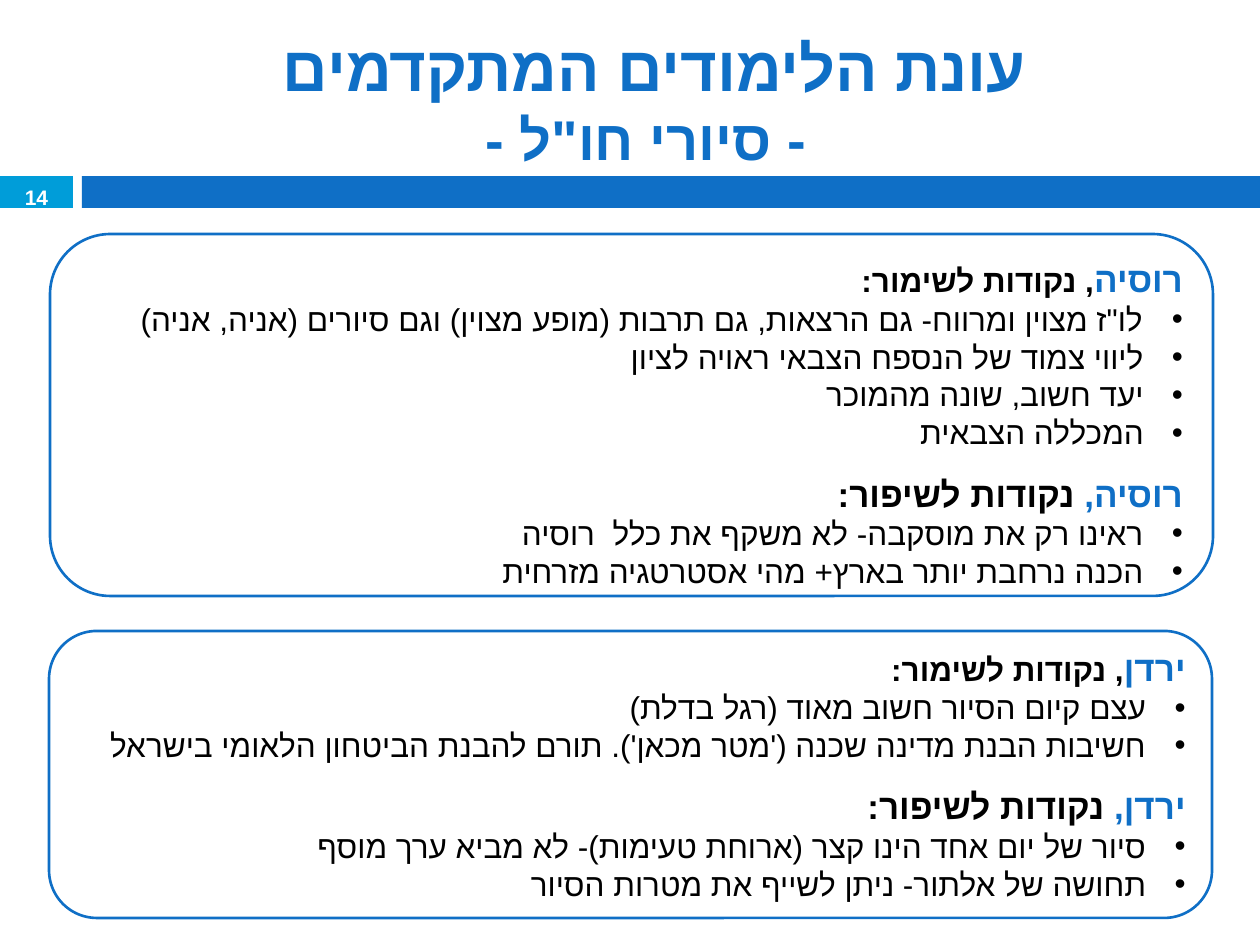
from lxml.etree import SubElement
from pptx import Presentation
from pptx.dml.color import RGBColor
from pptx.enum.shapes import MSO_SHAPE
from pptx.enum.text import MSO_ANCHOR, PP_ALIGN
from pptx.oxml.ns import qn
from pptx.util import Emu, Pt

PX = 914400 / 126
COLORS = {"blue": "0F6FC6", "cyan": "009DD9", "white": "FFFFFF", "black": "000000"}
BULLET_INDENT = 39

RUSSIA = [
    ("לו\"ז מצוין ומרווח- גם הרצאות, גם תרבות (מופע מצוין) וגם סיורים (אניה, אניה)",
     "ליווי צמוד של הנספח הצבאי ראויה לציון",
     "יעד חשוב, שונה מהמוכר",
     "המכללה הצבאית"),
    ("ראינו רק את מוסקבה- לא משקף את כלל  רוסיה",
     "הכנה נרחבת יותר בארץ+ מהי אסטרטגיה מזרחית"),
]
JORDAN = [
    ("עצם קיום הסיור חשוב מאוד (רגל בדלת)",
     "חשיבות הבנת מדינה שכנה ('מטר מכאן'). תורם להבנת הביטחון הלאומי בישראל"),
    ("סיור של יום אחד הינו קצר (ארוחת טעימות)- לא מביא ערך מוסף",
     "תחושה של אלתור- ניתן לשייף את מטרות הסיור"),
]


def px(n):
    return Emu(round(n * PX))


def color(name):
    return RGBColor.from_string(COLORS[name])


def add_box(s, kind, box, fill, line=None):
    sp = s.shapes.add_shape(kind, *map(px, box))
    sp.shadow.inherit = False
    sp.fill.solid()
    sp.fill.fore_color.rgb = color(fill)
    if line:
        sp.line.color.rgb = color(line)
        sp.line.width = Pt(1.5)
    else:
        sp.line.fill.background()
    return sp


def add_text(s, box):
    tf = s.shapes.add_textbox(*map(px, box)).text_frame
    tf.word_wrap = True
    tf.vertical_anchor = MSO_ANCHOR.MIDDLE
    return tf


def add_run(p, text, size, fill, font="Arial", bold=True):
    r = p.add_run()
    r.text = text
    r.font.size = Pt(size)
    r.font.bold = bold
    r.font.name = font
    r.font.color.rgb = color(fill)
    SubElement(r.font._element, qn("a:cs"), typeface="Arial")


def set_rtl(p, align):
    p.alignment = align
    p._p.get_or_add_pPr().set("rtl", "1")


def next_paragraph(tf):
    first = tf.paragraphs[0]
    p = tf.add_paragraph() if first.runs else first
    set_rtl(p, PP_ALIGN.JUSTIFY)
    return p


def add_bullet(tf, text):
    p = next_paragraph(tf)
    pPr = p._p.get_or_add_pPr()
    pPr.set("marL", str(px(BULLET_INDENT)))
    pPr.set("indent", str(-px(BULLET_INDENT)))
    SubElement(pPr, qn("a:buFont"), typeface="Arial")
    SubElement(pPr, qn("a:buChar"), char="•")
    add_run(p, text, 18, "black", bold=False)


def add_panel(s, box, anchor, country, points):
    sp = add_box(s, MSO_SHAPE.ROUNDED_RECTANGLE, box, "white", "blue")
    tf = sp.text_frame
    tf.word_wrap = True
    tf.vertical_anchor = anchor
    keep, improve = points

    p = next_paragraph(tf)
    add_run(p, country, 20, "blue")
    add_run(p, ", נקודות לשימור:", 18, "black")
    for text in keep:
        add_bullet(tf, text)

    p = next_paragraph(tf)
    p.line_spacing = 1.5
    add_run(p, f"{country}, ", 20, "blue")
    add_run(p, "נקודות לשיפור:", 20, "black")
    for text in improve:
        add_bullet(tf, text)


def add_header(s):
    add_box(s, MSO_SHAPE.RECTANGLE, (0, 176, 73, 32), "cyan")
    add_box(s, MSO_SHAPE.RECTANGLE, (82, 176, 1178, 32), "blue")

    p = add_text(s, (84, 32, 1124, 136)).paragraphs[0]
    set_rtl(p, PP_ALIGN.CENTER)
    add_run(p, "עונת הלימודים המתקדמים ", 36, "blue", "Calibri")
    p.add_line_break()
    add_run(p, "- סיורי חו\"ל -", 32, "blue", "Calibri")

    p = add_text(s, (0, 180, 73, 34)).paragraphs[0]
    set_rtl(p, PP_ALIGN.CENTER)
    add_run(p, "14", 12, "white", "Calibri")


def main():
    prs = Presentation()
    prs.slide_width, prs.slide_height = px(1260), px(945)
    s = prs.slides.add_slide(prs.slide_layouts[6])
    add_header(s)
    add_panel(s, (50, 234, 1163, 362), MSO_ANCHOR.TOP, "רוסיה", RUSSIA)
    add_panel(s, (49, 631, 1163, 287), MSO_ANCHOR.MIDDLE, "ירדן", JORDAN)
    prs.save("out.pptx")


if __name__ == "__main__":
    main()
